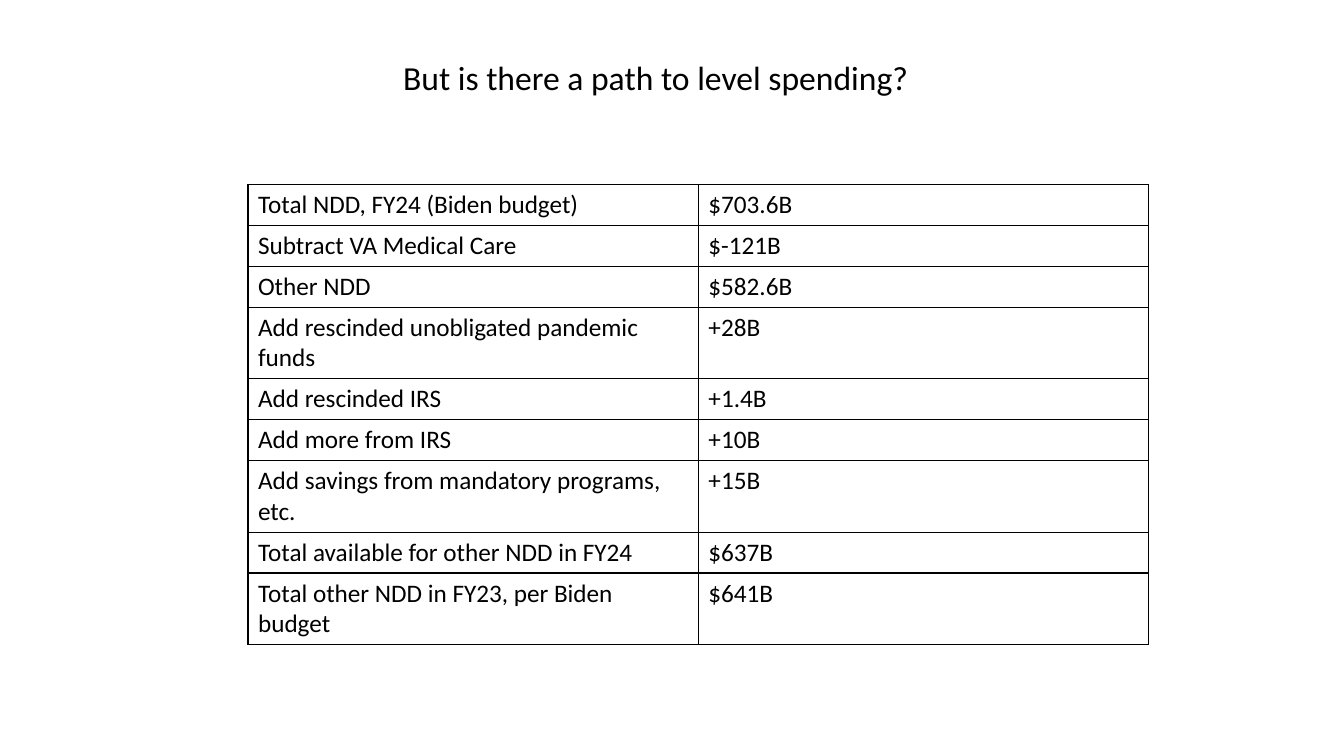
from dataclasses import dataclass

from lxml import etree
from pptx import Presentation
from pptx import util as u
from pptx.dml import color
from pptx.enum import text
from pptx.oxml import ns

FONT = "Calibri"
BLACK = "000000"


@dataclass(frozen=True)
class BudgetLine:
    label: str
    amount: str


BUDGET_LINES = [
    BudgetLine("Total NDD, FY24 (Biden budget)", "$703.6B"),
    BudgetLine("Subtract VA Medical Care", "$-121B"),
    BudgetLine("Other NDD", "$582.6B"),
    BudgetLine("Add rescinded unobligated pandemic funds", "+28B"),
    BudgetLine("Add rescinded IRS", "+1.4B"),
    BudgetLine("Add more from IRS", "+10B"),
    BudgetLine("Add savings from mandatory programs, etc.", "+15B"),
    BudgetLine("Total available for other NDD in FY24", "$637B"),
    BudgetLine("Total other NDD in FY23, per Biden budget", "$641B"),
]


def rgb(value: str) -> color.RGBColor:
    return color.RGBColor.from_string(value)


def write(frame, words: str, size: float) -> None:
    frame.text = words
    for para in frame.paragraphs:
        for span in para.runs:
            span.font.name = FONT
            span.font.size = u.Pt(size)
            span.font.color.rgb = rgb(BLACK)


def add_borders(cell, value: str, points: float) -> None:
    properties = cell._tc.get_or_add_tcPr()
    # Border lines come before the fill in the cell properties
    for position, side in enumerate(("lnL", "lnR", "lnT", "lnB")):
        line = etree.Element(ns.qn(f"a:{side}"), w=str(u.Pt(points)))
        fill = etree.SubElement(line, ns.qn("a:solidFill"))
        etree.SubElement(fill, ns.qn("a:srgbClr"), val=value)
        properties.insert(position, line)


def add_title(page, words: str) -> None:
    box = page.shapes.add_textbox(u.Cm(9.91), u.Cm(1.3), u.Cm(14.02), u.Cm(1.28))
    box.text_frame.word_wrap = True
    box.text_frame.auto_size = text.MSO_AUTO_SIZE.SHAPE_TO_FIT_TEXT
    write(box.text_frame, words, 24)


def add_budget_table(page, lines: list[BudgetLine]) -> None:
    column_width, row_height = u.Cm(11.35), u.Cm(1.03)
    table = page.shapes.add_table(
        len(lines), 2, u.Cm(6.25), u.Cm(4.65),
        2 * column_width, len(lines) * row_height,
    ).table
    table.first_row = False
    table.horz_banding = False
    for row, line in enumerate(lines):
        for column, words in enumerate((line.label, line.amount)):
            cell = table.cell(row, column)
            write(cell.text_frame, words, 18)
            cell.fill.background()
            add_borders(cell, BLACK, 1)


def main() -> None:
    deck = Presentation()
    deck.slide_width, deck.slide_height = u.Cm(33.87), u.Cm(19.05)
    page = deck.slides.add_slide(deck.slide_layouts[6])

    # Budget arithmetic
    add_budget_table(page, BUDGET_LINES)

    # Heading
    add_title(page, "But is there a path to level spending?")

    deck.save("out.pptx")


if __name__ == "__main__":
    main()
